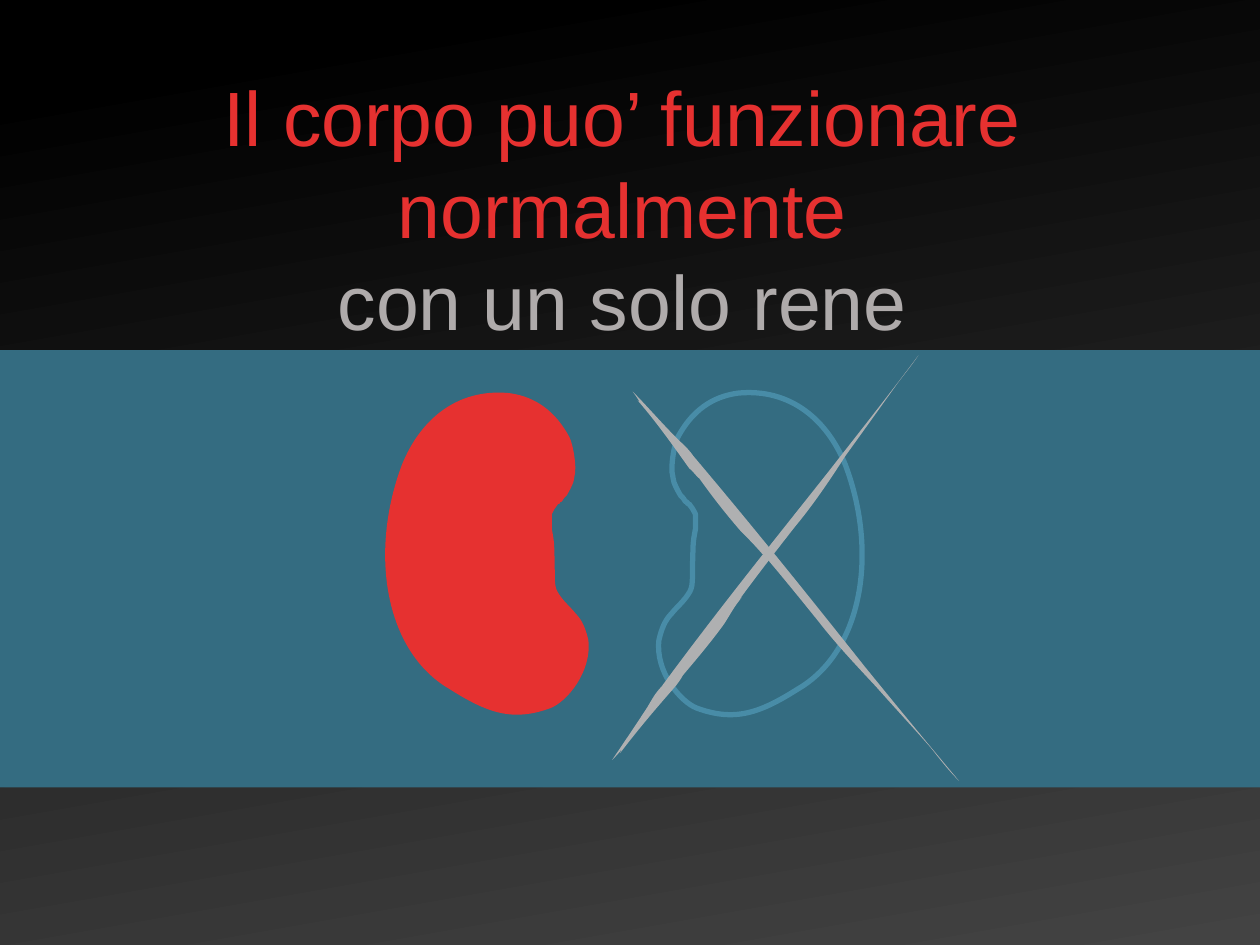
from dataclasses import dataclass
from math import cos, radians, sin
from typing import Optional

from lxml import etree
from pptx import Presentation
from pptx import util as u
from pptx.dml.color import RGBColor
from pptx.enum import shapes, text
from pptx.oxml import ns

COLORS = {
    "black": "000000",
    "charcoal": "434343",
    "red": "E63130",
    "light_gray": "AFABAB",
    "teal": "346C81",
    "blue": "488CA7",
    "cross_gray": "AFB0B1",
}
UNITS_PER_INCH = 1000
MIRROR_SUM = 9.9

Point = tuple[float, float]
Curve = tuple[float, float, float, float, float, float]


@dataclass(frozen=True)
class Outline:
    start: Point
    curves: tuple[Curve, ...]
    fill: Optional[str] = None
    line: Optional[str] = None
    mirrored: bool = False
    rotation: float = 0
    center: Point = (0, 0)


@dataclass(frozen=True)
class TitleLine:
    wording: str
    color: str


KIDNEY_START = (4.4, 4.37)
KIDNEY_CURVES = (
    (4.4, 4.3, 4.39, 4.25, 4.38, 4.2),
    (4.38, 4.19, 4.38, 4.19, 4.38, 4.17),
    (4.38, 4.15, 4.38, 4.12, 4.38, 4.1),
    (4.38, 4.1, 4.38, 4.09, 4.38, 4.08),
    (4.39, 4.05, 4.41, 4.03, 4.43, 4),
    (4.43, 4, 4.44, 4, 4.44, 4),
    (4.44, 3.99, 4.45, 3.98, 4.46, 3.98),
    (4.47, 3.96, 4.48, 3.95, 4.5, 3.93),
    (4.51, 3.91, 4.53, 3.88, 4.55, 3.83),
    (4.55, 3.82, 4.56, 3.8, 4.56, 3.78),
    (4.58, 3.71, 4.55, 3.53, 4.52, 3.47),
    (4.38, 3.21, 4.19, 3.14, 4.04, 3.12),
    (3.62, 3.08, 3.33, 3.34, 3.19, 3.69),
    (2.93, 4.38, 3.05, 5.17, 3.57, 5.47),
    (3.87, 5.66, 4.07, 5.73, 4.37, 5.62),
    (4.5, 5.57, 4.7, 5.33, 4.67, 5.08),
    (4.65, 4.99, 4.62, 4.92, 4.57, 4.87),
    (4.53, 4.82, 4.48, 4.78, 4.44, 4.72),
    (4.39, 4.65, 4.41, 4.62, 4.4, 4.37),
)
KIDNEYS = (
    Outline(KIDNEY_START, KIDNEY_CURVES, fill="red"),
    Outline(KIDNEY_START, KIDNEY_CURVES, line="blue", mirrored=True),
)
CROSS_STROKES = (
    Outline((5.37, 3.48), (
        (5.41, 3.52, 5.46, 3.56, 5.5, 3.62),
        (5.99, 4.2, 6.4, 4.71, 6.86, 5.29),
        (7.12, 5.61, 7.35, 5.89, 7.61, 6.2),
        (7.53, 6.12, 7.46, 6.03, 7.39, 5.94),
        (7.24, 5.77, 7.1, 5.62, 6.95, 5.45),
        (6.81, 5.3, 6.64, 5.12, 6.5, 4.94),
        (6.13, 4.48, 5.96, 4.29, 6.05, 4.4),
        (5.99, 4.33, 5.94, 4.28, 5.88, 4.22),
        (5.75, 4.07, 5.65, 3.94, 5.55, 3.8),
        (5.53, 3.79, 5.49, 3.73, 5.47, 3.72),
        (5.34, 3.54, 5.23, 3.38, 5.06, 3.18),
        (5.08, 3.19, 5.09, 3.21, 5.09, 3.21),
        (5.06, 3.17, 5.05, 3.15, 5.02, 3.11),
        (5.12, 3.21, 5.25, 3.36, 5.37, 3.48),
    ), fill="cross_gray", rotation=18.3, center=(6.31, 4.65)),
    Outline((5.14, 5.62), (
        (5.17, 5.57, 5.2, 5.51, 5.25, 5.46),
        (5.7, 4.85, 6.11, 4.34, 6.57, 3.76),
        (6.82, 3.44, 7.05, 3.15, 7.29, 2.83),
        (7.23, 2.92, 7.16, 3, 7.09, 3.1),
        (6.96, 3.28, 6.84, 3.45, 6.71, 3.63),
        (6.6, 3.8, 6.46, 4.01, 6.31, 4.19),
        (5.95, 4.65, 5.8, 4.86, 5.89, 4.75),
        (5.83, 4.82, 5.8, 4.88, 5.75, 4.96),
        (5.64, 5.11, 5.53, 5.24, 5.42, 5.37),
        (5.41, 5.39, 5.37, 5.45, 5.35, 5.47),
        (5.21, 5.63, 5.08, 5.78, 4.92, 5.99),
        (4.93, 5.97, 4.94, 5.95, 4.94, 5.95),
        (4.91, 5.99, 4.9, 6, 4.86, 6.04),
        (4.94, 5.92, 5.05, 5.76, 5.14, 5.62),
    ), fill="cross_gray", rotation=275.3, center=(6.08, 4.43)),
)
TITLE_LINES = (
    TitleLine("Il corpo puo’ funzionare normalmente", "red"),
    TitleLine("con un solo rene", "light_gray"),
)


def rgb(name: str) -> RGBColor:
    return RGBColor.from_string(COLORS[name])


def style_shape(shape, fill: Optional[str], line: Optional[str] = None) -> None:
    shape.shadow.inherit = False
    if fill:
        shape.fill.solid()
        shape.fill.fore_color.rgb = rgb(fill)
    else:
        shape.fill.background()
    if line:
        shape.line.color.rgb = rgb(line)
        shape.line.width = u.Pt(3)
    else:
        shape.line.fill.background()


def local_point(outline: Outline, point: Point) -> Point:
    x, y = point
    if outline.mirrored:
        x = MIRROR_SUM - x
    center_x, center_y = outline.center
    angle = radians(outline.rotation)
    dx, dy = x - center_x, y - center_y
    x = center_x + dx * cos(angle) + dy * sin(angle)
    y = center_y - dx * sin(angle) + dy * cos(angle)
    return x * UNITS_PER_INCH, y * UNITS_PER_INCH


def bend_segments(shape) -> None:
    segments = list(shape.element.iter(ns.qn("a:lnTo")))
    for index in range(0, len(segments), 3):
        curve = etree.Element(ns.qn("a:cubicBezTo"))
        segments[index].addprevious(curve)
        for segment in segments[index:index + 3]:
            curve.append(segment[0])
            segment.getparent().remove(segment)


def draw_outline(container, outline: Outline) -> None:
    points = [outline.start]
    for curve in outline.curves:
        points.extend(zip(curve[::2], curve[1::2]))
    points = [local_point(outline, point) for point in points]
    builder = container.build_freeform(*points[0], scale=u.Inches(1) / UNITS_PER_INCH)
    builder.add_line_segments(points[1:], close=True)
    shape = builder.convert_to_shape()
    bend_segments(shape)
    shape.rotation = outline.rotation
    style_shape(shape, outline.fill, outline.line)


def draw_background(slide) -> None:
    fill = slide.background.fill
    fill.gradient()
    fill.gradient_angle = 280
    for stop, position, color in zip(fill.gradient_stops, (0.08, 1), ("black", "charcoal")):
        stop.position = position
        stop.color.rgb = rgb(color)


def draw_title(slide) -> None:
    box = slide.shapes.add_textbox(u.Inches(0.13), u.Inches(0.5), u.Inches(9.62), u.Inches(2.32))
    frame = box.text_frame
    frame.word_wrap = True
    frame.auto_size = text.MSO_AUTO_SIZE.SHAPE_TO_FIT_TEXT
    paragraph = frame.paragraphs[0]
    paragraph.text = "\v".join(line.wording for line in TITLE_LINES)
    paragraph.alignment = text.PP_ALIGN.CENTER
    for run, line in zip(paragraph.runs, TITLE_LINES):
        run.font.name = "Arial"
        run.font.size = u.Pt(44)
        run.font.color.rgb = rgb(line.color)


def main() -> None:
    presentation = Presentation()
    presentation.slide_width = u.Inches(10)
    presentation.slide_height = u.Inches(7.5)
    slide = presentation.slides.add_slide(presentation.slide_layouts[6])
    draw_background(slide)
    draw_title(slide)
    band = slide.shapes.add_shape(
        shapes.MSO_SHAPE.RECTANGLE, 0, u.Inches(2.78), u.Inches(10), u.Inches(3.47)
    )
    style_shape(band, "teal")
    kidney_group = slide.shapes.add_group_shape()
    for kidney in KIDNEYS:
        draw_outline(kidney_group.shapes, kidney)
    for stroke in CROSS_STROKES:
        draw_outline(slide.shapes, stroke)
    presentation.save("out.pptx")


if __name__ == "__main__":
    main()
